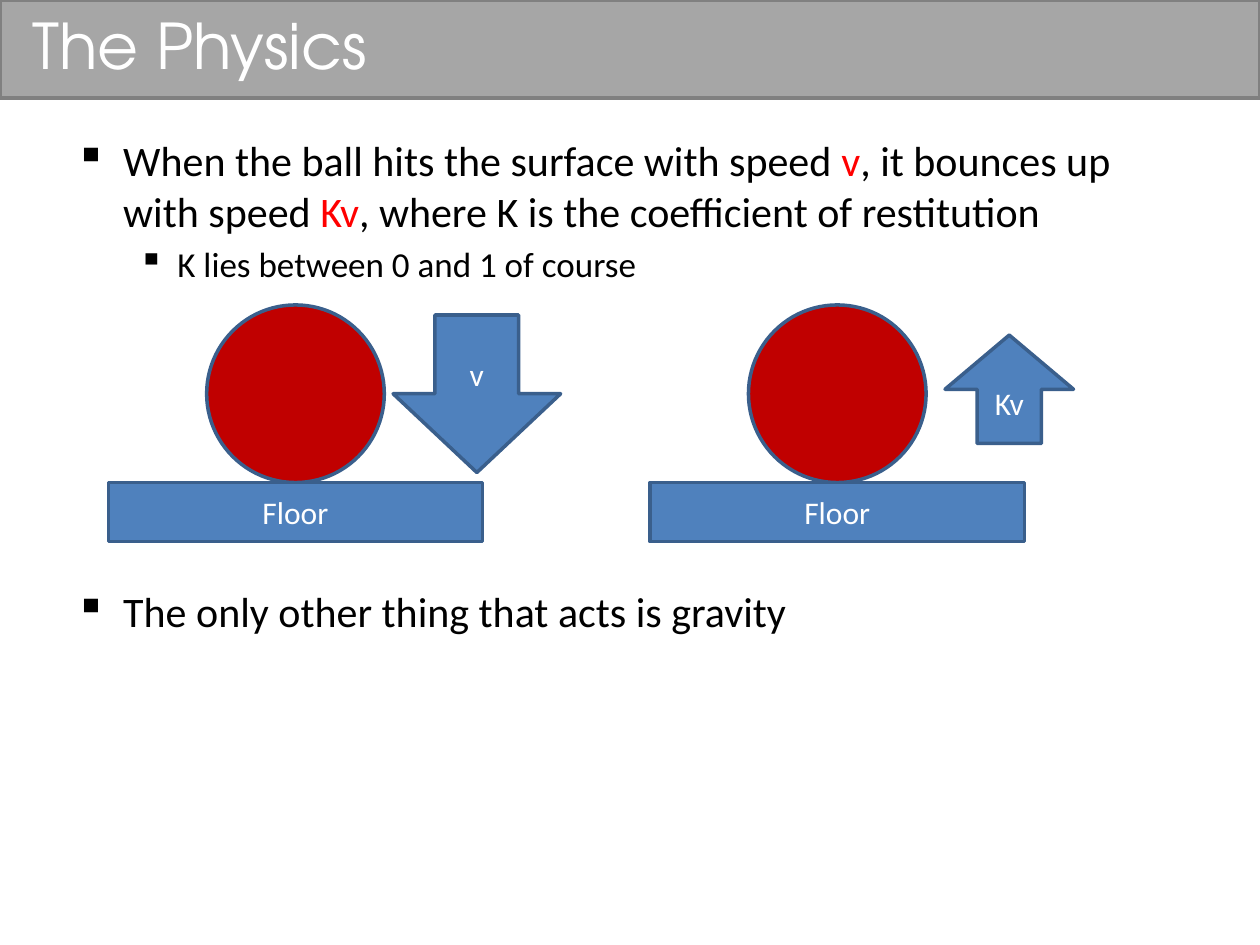
from lxml import etree
from pptx import Presentation
from pptx.dml.color import RGBColor
from pptx.enum.shapes import MSO_SHAPE
from pptx.enum.text import MSO_ANCHOR, PP_ALIGN
from pptx.oxml.ns import qn
from pptx.util import Inches, Pt

RECT, OVAL = MSO_SHAPE.RECTANGLE, MSO_SHAPE.OVAL
DOWN, UP = MSO_SHAPE.DOWN_ARROW, MSO_SHAPE.UP_ARROW
MIDDLE, CENTER = MSO_ANCHOR.MIDDLE, PP_ALIGN.CENTER

WHITE = RGBColor(0xFF, 0xFF, 0xFF)
BLACK = RGBColor(0x00, 0x00, 0x00)
RED = RGBColor(0xFF, 0x00, 0x00)
BAR_GREY = RGBColor(0xA6, 0xA6, 0xA6)
BAR_EDGE = RGBColor(0x80, 0x80, 0x80)
BALL_RED = RGBColor(0xC0, 0x00, 0x00)
BLUE = RGBColor(0x4F, 0x81, 0xBD)
BLUE_EDGE = RGBColor(0x3A, 0x5F, 0x8C)


def style_run(r, size, color, font="Calibri"):
    r.font.name = font
    r.font.size = Pt(size)
    r.font.color.rgb = color


def add_box(kind, x, y, w, h, fill, edge, label=""):
    sp = s.shapes.add_shape(kind, Inches(x), Inches(y), Inches(w), Inches(h))
    sp.shadow.inherit = False
    sp.fill.solid()
    sp.fill.fore_color.rgb = fill
    sp.line.color.rgb = edge
    sp.line.width = Pt(2)
    if label:
        tf = sp.text_frame
        tf.text = label
        tf.vertical_anchor = MIDDLE
        tf.paragraphs[0].alignment = CENTER
        style_run(tf.paragraphs[0].runs[0], 18, WHITE)


prs = Presentation()
prs.slide_width, prs.slide_height = Inches(10), Inches(7.5)
s = prs.slides.add_slide(prs.slide_layouts[6])

# Title bar
add_box(RECT, 0, 0, 10, 0.78, BAR_GREY, BAR_EDGE)
tf = s.shapes.add_textbox(Inches(0.16), 0, Inches(9.53), Inches(0.7)).text_frame
tf.word_wrap = True
tf.vertical_anchor = MIDDLE
tf.text = "The Physics"
style_run(tf.paragraphs[0].runs[0], 36, WHITE, "TeX Gyre Adventor")

# Bullets: size, left margin, hanging indent, space before, runs
bullets = [
    (24, 0.38, 0.38, 0, [
        ("When the ball hits the surface with speed ", BLACK),
        ("v", RED),
        (", it bounces up with speed ", BLACK),
        ("Kv", RED),
        (", where K is the coefficient of restitution", BLACK),
    ]),
    (20, 0.81, 0.31, 4, [("K lies between 0 and 1 of course", BLACK)]),
    # The wide space leaves room for the diagrams
    (24, 0.38, 0.38, 172, [("The only other thing that acts is gravity", BLACK)]),
]
tf = s.shapes.add_textbox(Inches(0.5), Inches(1.02), Inches(9), Inches(6.02)).text_frame
tf.word_wrap = True
for i, (size, margin, hang, before, runs) in enumerate(bullets):
    p = tf.add_paragraph() if i else tf.paragraphs[0]
    p.level = 1 if size == 20 else 0
    p.space_before = Pt(before)
    pPr = p._p.get_or_add_pPr()
    pPr.set("marL", str(Inches(margin)))
    pPr.set("indent", str(-Inches(hang)))
    etree.SubElement(pPr, qn("a:buChar")).set("char", "▪")
    for text, color in runs:
        r = p.add_run()
        r.text = text
        style_run(r, size, color)

# Ball on the floor, before and after the bounce
BALL, FLOOR_W, FLOOR_Y = 1.41, 2.97, 3.83
for x, arrow, label, dx, y, w, h in [
    (0.86, DOWN, "v", 2.26, 2.5, 1.33, 1.25),
    (5.16, UP, "Kv", 2.34, 2.66, 1.02, 0.86),
]:
    add_box(OVAL, x + (FLOOR_W - BALL) / 2, FLOOR_Y - BALL, BALL, BALL, BALL_RED, BLUE_EDGE)
    add_box(RECT, x, FLOOR_Y, FLOOR_W, 0.47, BLUE, BLUE_EDGE, "Floor")
    add_box(arrow, x + dx, y, w, h, BLUE, BLUE_EDGE, label)

prs.save("out.pptx")
